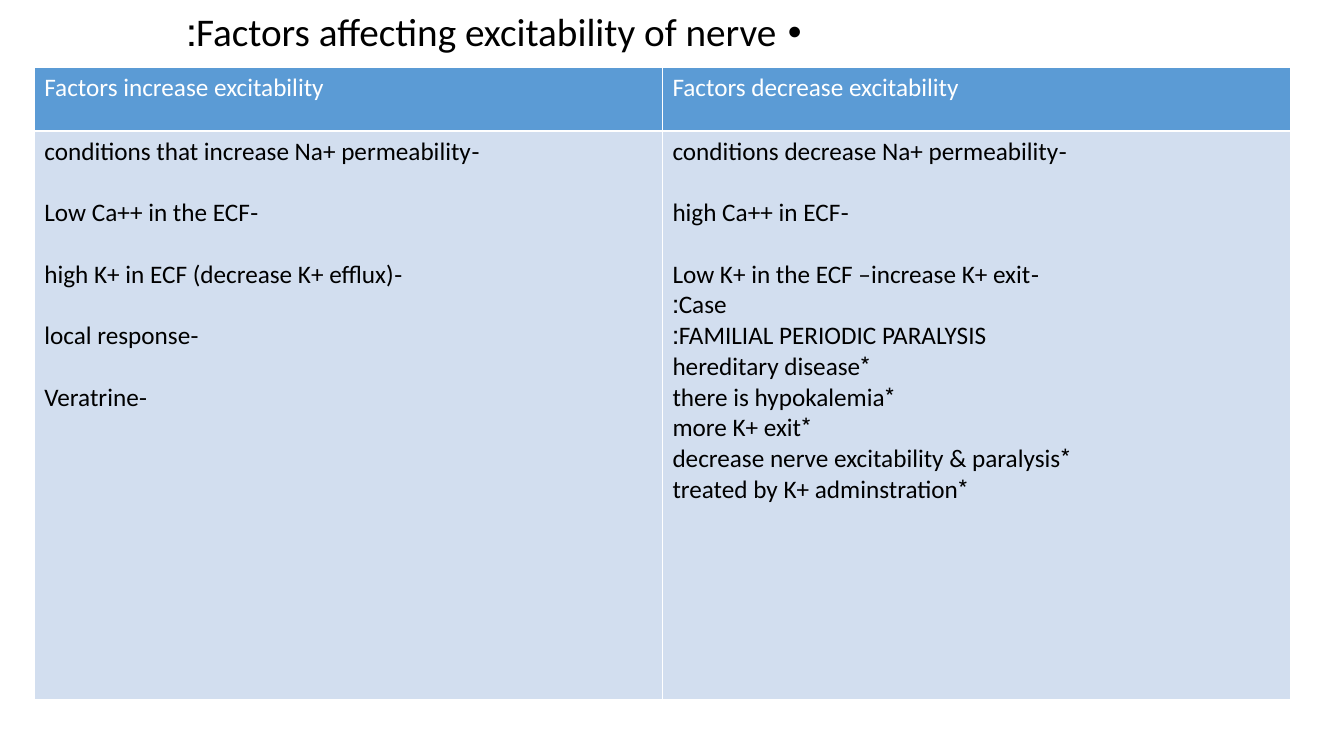
from pptx import Presentation
from pptx import util as u
from pptx.dml.color import RGBColor
from pptx.enum import text
from pptx.oxml import parse_xml
from pptx.oxml.ns import nsdecls

PX = 9144
FONT = "Calibri"
BLACK = RGBColor(0x00, 0x00, 0x00)
WHITE = RGBColor(0xFF, 0xFF, 0xFF)
HEADER_BLUE = RGBColor(0x5B, 0x9B, 0xD5)
BODY_BLUE = RGBColor(0xD2, 0xDE, 0xEF)
LINE_GAP = 22

TITLE = "Factors affecting excitability of nerve:"
HEADERS = ["Factors increase excitability", "Factors decrease excitability"]
INCREASING = [
    ("-conditions that increase Na+ permeability", LINE_GAP),
    ("-Low Ca++ in the ECF", LINE_GAP),
    ("-high K+ in ECF (decrease K+ efflux)", LINE_GAP),
    ("-local response", LINE_GAP),
    ("-Veratrine", 0),
]
DECREASING = [
    ("-conditions decrease Na+ permeability", LINE_GAP),
    ("-high Ca++ in ECF", LINE_GAP),
    ("-Low K+ in the ECF –increase K+ exit", 0),
    ("Case:", 0),
    ("FAMILIAL PERIODIC PARALYSIS:", 0),
    ("*hereditary disease", 0),
    ("*there is hypokalemia", 0),
    ("*more K+ exit", 0),
    ("*decrease nerve excitability & paralysis", 0),
    ("*treated by K+ adminstration", 0),
]


def px(length):
    """Turn whole pixels into EMU."""
    return u.Emu(length * PX)


def write(paragraph, words, size=18, color=BLACK, after=0):
    """Fill a left-set, right-to-left paragraph with formatted text."""
    paragraph.alignment = text.PP_ALIGN.LEFT
    paragraph._p.get_or_add_pPr().set("rtl", "1")
    paragraph.space_after = u.Pt(after)
    run = paragraph.add_run()
    run.text = words
    run.font.name = FONT
    run.font.size = u.Pt(size)
    run.font.bold = False
    run.font.color.rgb = color


def add_title(slide, left, top, width, height):
    """Place the bulleted heading in its box."""
    box = slide.shapes.add_textbox(px(left), px(top), px(width), px(height))
    box.text_frame.word_wrap = True
    paragraph = box.text_frame.paragraphs[0]
    write(paragraph, TITLE, size=28)
    paragraph.line_spacing = 0.9
    paragraph.space_before = u.Pt(10)
    properties = paragraph._p.get_or_add_pPr()
    properties.set("marL", str(px(25)))
    properties.set("indent", str(px(-25)))
    properties.append(parse_xml(f'<a:buFont {nsdecls("a")} typeface="Arial"/>'))
    properties.append(parse_xml(f'<a:buChar {nsdecls("a")} char="•"/>'))


def fill_cell(cell, lines, fill, color):
    """Colour a cell, edge it in white and write its lines with their gaps."""
    cell.fill.solid()
    cell.fill.fore_color.rgb = fill
    properties = cell._tc.get_or_add_tcPr()
    for index, side in enumerate("LRTB"):
        properties.insert(index, parse_xml(
            f'<a:ln{side} {nsdecls("a")} w="{u.Pt(1)}"><a:solidFill>'
            f'<a:srgbClr val="{WHITE}"/></a:solidFill></a:ln{side}>'))
    frame = cell.text_frame
    for index, (words, after) in enumerate(lines):
        paragraph = frame.add_paragraph() if index else frame.paragraphs[0]
        write(paragraph, words, color=color, after=after)


def add_factor_table(slide, left, top, width, height, header_height):
    """Place the two-column comparison of factors."""
    table = slide.shapes.add_table(
        2, 2, px(left), px(top), px(width), px(height)).table
    table.rows[0].height = px(header_height)
    table.rows[1].height = px(height - header_height)
    for column, factors in enumerate([INCREASING, DECREASING]):
        table.columns[column].width = px(width // 2)
        fill_cell(table.cell(0, column), [(HEADERS[column], 0)], HEADER_BLUE, WHITE)
        fill_cell(table.cell(1, column), factors, BODY_BLUE, BLACK)


def main():
    """Build and save the slide."""
    presentation = Presentation()
    presentation.slide_width = px(1333)
    presentation.slide_height = px(750)
    slide = presentation.slides.add_slide(presentation.slide_layouts[6])
    add_title(slide, 175, 8, 983, 733)
    add_factor_table(slide, 34, 67, 1246, 627, 63)
    presentation.save("out.pptx")


if __name__ == "__main__":
    main()
